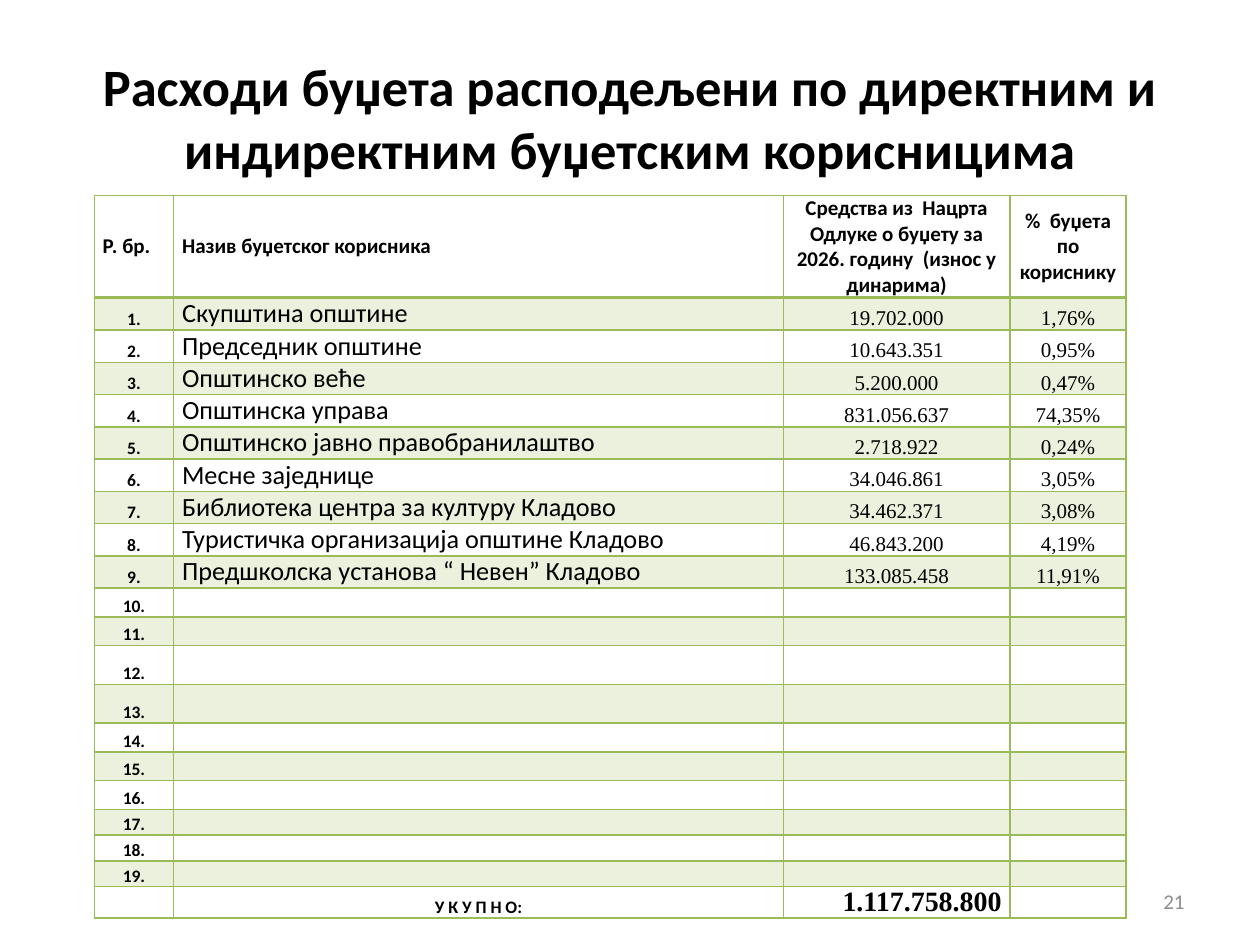
from lxml.etree import SubElement
from pptx import Presentation
from pptx.dml.color import RGBColor
from pptx.enum.text import MSO_ANCHOR, PP_ALIGN
from pptx.oxml.ns import qn
from pptx.util import Cm, Pt

BLACK = RGBColor(0x00, 0x00, 0x00)
GREEN = RGBColor(0x9B, 0xBB, 0x59)
GREY = RGBColor(0x8C, 0x8C, 0x8C)
SANS, SERIF = "Calibri", "Times New Roman"
LEFT, CENTER, RIGHT = PP_ALIGN.LEFT, PP_ALIGN.CENTER, PP_ALIGN.RIGHT

HEADINGS = [
    "Р. бр.",
    "Назив буџетског корисника",
    "Средства из  Нацрта Одлуке о буџету за 2026. годину  (износ у динарима)",
    "%  буџета по кориснику",
]
USERS = [
    ("Скупштина општине", "19.702.000", "1,76%"),
    ("Председник општине", "10.643.351", "0,95%"),
    ("Општинско веће", "5.200.000", "0,47%"),
    ("Општинска управа", "831.056.637", "74,35%"),
    ("Општинско јавно правобранилаштво", "2.718.922", "0,24%"),
    ("Месне заједнице", "34.046.861", "3,05%"),
    ("Библиотека центра за културу Кладово", "34.462.371", "3,08%"),
    ("Туристичка организација општине Кладово", "46.843.200", "4,19%"),
    ("Предшколска установа “ Невен” Кладово", "133.085.458", "11,91%"),
]
NUMBERED_ROWS = 19
TOTAL = ["", "У К У П Н О:", "1.117.758.800", ""]

COLUMN_WIDTHS = [1.6, 12.29, 4.57, 2.34]
ROW_HEIGHTS = ([2.06] + [0.65] * 9 + [0.58] * 2 + [0.78] * 2
               + [0.58] * 3 + [0.52] * 3 + [0.62])

# Each column: alignment, size, font name, bold
HEADING_STYLES = [(align, 12, SANS, True) for align in (LEFT, LEFT, CENTER, CENTER)]
USER_STYLES = [(CENTER, 10, SANS, True), (LEFT, 15, SANS, False),
               (CENTER, 12, SERIF, False), (CENTER, 12, SERIF, False)]
TOTAL_STYLES = [(CENTER, 10, SANS, True), (CENTER, 10, SANS, True),
                (RIGHT, 16, SERIF, True), (CENTER, 10, SANS, True)]


def format_paragraph(para, align, size, name, bold, color=BLACK):
    para.alignment = align
    font = para.font
    font.size, font.name, font.bold = Pt(size), name, bold
    font.color.rgb = color


def add_title(page, text, left, top, width, height):
    title = page.shapes.title
    title.left, title.top, title.width, title.height = left, top, width, height
    frame = title.text_frame
    frame.text = text
    frame.vertical_anchor = MSO_ANCHOR.MIDDLE
    format_paragraph(frame.paragraphs[0], CENTER, 30, SANS, True)


def set_borders(cell, widths):
    """Draw green cell borders; widths maps L, R, T and B to points."""
    properties = cell._tc.get_or_add_tcPr()
    for side, width in widths.items():
        line = SubElement(properties, qn(f"a:ln{side}"), w=str(Pt(width)))
        fill = SubElement(line, qn("a:solidFill"))
        SubElement(fill, qn("a:srgbClr"), val=str(GREEN))


def set_tint(cell):
    """Fill the cell with green at 20 % opacity."""
    cell.fill.solid()
    cell.fill.fore_color.rgb = GREEN
    color = cell._tc.tcPr.find(f"{qn('a:solidFill')}/{qn('a:srgbClr')}")
    SubElement(color, qn("a:alpha"), val="20000")


def fill_cell(cell, text, style, anchor, tinted, top_width, bottom_width):
    cell.margin_left = cell.margin_right = Cm(0.17)
    cell.margin_top = cell.margin_bottom = 0
    cell.vertical_anchor = anchor
    set_borders(cell, {"L": 1, "R": 1, "T": top_width, "B": bottom_width})
    if tinted:
        set_tint(cell)
    else:
        cell.fill.background()
    para = cell.text_frame.paragraphs[0]
    if text:
        para.text = text
        format_paragraph(para, *style)
    else:
        # An empty cell takes its line height from the paragraph end mark
        SubElement(para._p, qn("a:endParaRPr"), sz="1000")


def add_budget_table(page, left, top):
    blank = ("", "", "")
    numbered = [(f"{i + 1}.", *(USERS[i] if i < len(USERS) else blank))
                for i in range(NUMBERED_ROWS)]
    rows = [HEADINGS, *numbered, TOTAL]
    last = len(rows) - 1
    table = page.shapes.add_table(
        len(rows), len(HEADINGS), left, top,
        Cm(sum(COLUMN_WIDTHS)), Cm(sum(ROW_HEIGHTS))).table
    table.first_row = table.horz_banding = False
    for column, width in zip(table.columns, COLUMN_WIDTHS):
        column.width = Cm(width)
    for row, height in zip(table.rows, ROW_HEIGHTS):
        row.height = Cm(height)

    for r, texts in enumerate(rows):
        styles = {0: HEADING_STYLES, last: TOTAL_STYLES}.get(r, USER_STYLES)
        anchor = MSO_ANCHOR.MIDDLE if r == 0 else MSO_ANCHOR.BOTTOM
        for c, (text, style) in enumerate(zip(texts, styles)):
            fill_cell(table.cell(r, c), text, style, anchor, r % 2 == 1,
                      top_width=2 if r == 1 else 1,
                      bottom_width=2 if r == 0 else 1)


def add_page_number(page, number, left, top, width, height):
    frame = page.shapes.add_textbox(left, top, width, height).text_frame
    frame.word_wrap = True
    frame.vertical_anchor = MSO_ANCHOR.MIDDLE
    frame.text = number
    format_paragraph(frame.paragraphs[0], RIGHT, 12, SANS, False, GREY)


def main():
    deck = Presentation()
    deck.slide_width, deck.slide_height = Cm(25.4), Cm(19.05)
    page = deck.slides.add_slide(deck.slide_layouts.get_by_name("Title Only"))
    add_title(page,
              "Расходи буџета расподељени по директним и "
              "индиректним буџетским корисницима",
              Cm(1.27), Cm(0.76), Cm(22.86), Cm(3.18))
    add_budget_table(page, Cm(1.9), Cm(3.94))
    add_page_number(page, "21", Cm(18.2), Cm(17.66), Cm(5.93), Cm(1.01))
    deck.save("out.pptx")


if __name__ == "__main__":
    main()
